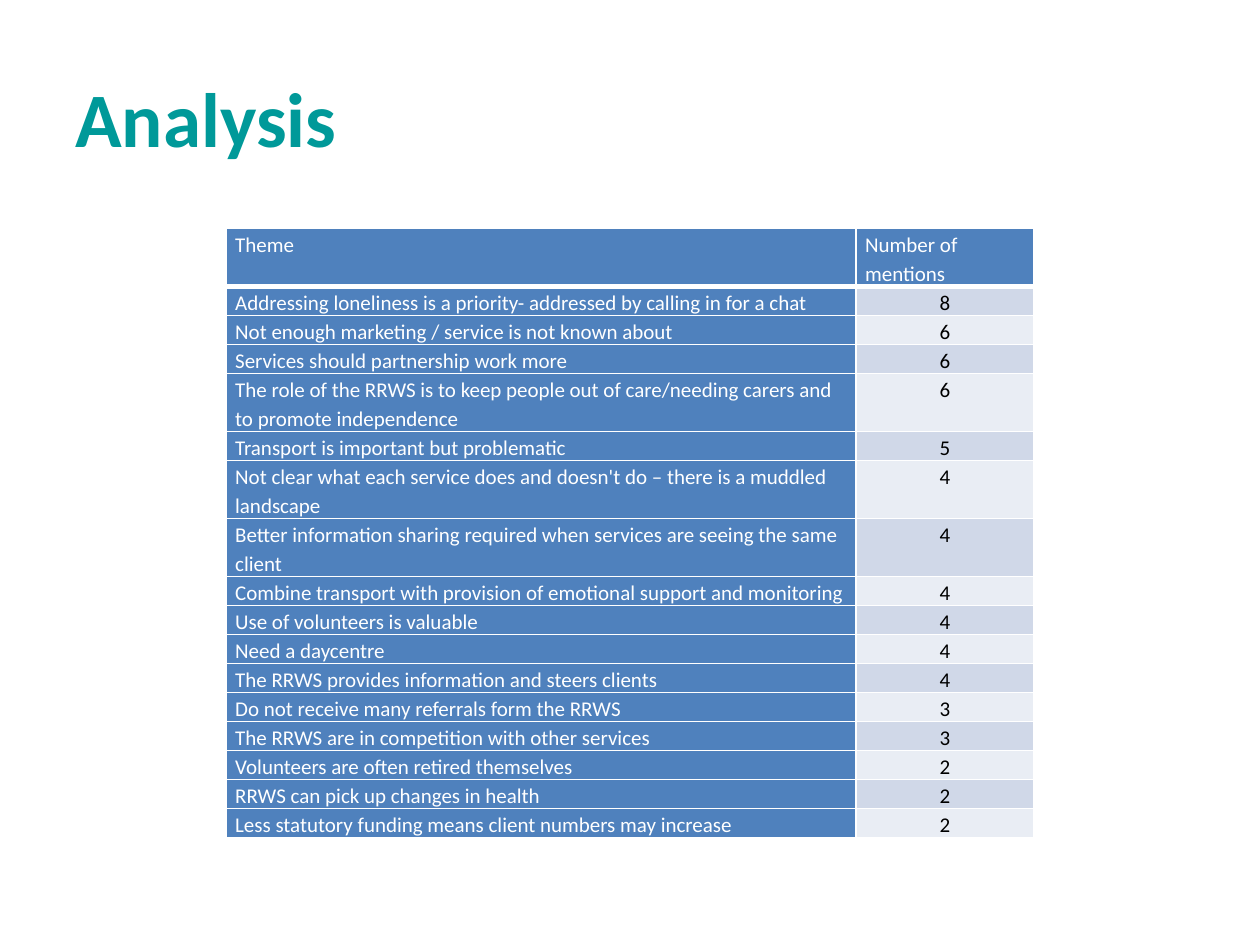
"""Build the analysis slide with its table of themes and mentions."""
from lxml import etree
from pptx import Presentation
from pptx import util as u
from pptx.dml.color import RGBColor
from pptx.enum import text
from pptx.oxml.ns import qn

HUES = {"teal": "009999", "blue": "4F81BD", "odd": "D0D8E8",
        "even": "E9EDF4", "white": "FFFFFF", "black": "000000"}

THEMES = [
    ("Addressing loneliness is a priority- addressed by calling in for a chat", 8),
    ("Not enough marketing / service is not known about", 6),
    ("Services should partnership work more", 6),
    ("The role of the RRWS is to keep people out of care/needing carers "
     "and to promote independence", 6),
    ("Transport is important but problematic", 5),
    ("Not clear what each service does and doesn't do – there is a muddled landscape", 4),
    ("Better information sharing required when services are seeing the same client", 4),
    ("Combine transport with provision of emotional support and monitoring", 4),
    ("Use of volunteers is valuable", 4),
    ("Need a daycentre", 4),
    ("The RRWS provides information and steers clients", 4),
    ("Do not receive many referrals form the RRWS", 3),
    ("The RRWS are in competition with other services", 3),
    ("Volunteers are often retired themselves", 2),
    ("RRWS can pick up changes in health", 2),
    ("Less statutory funding means client numbers may increase", 2),
]


class Deck:
    def __init__(self, slide, font="Calibri"):
        self.slide = slide
        self.font = font

    def label(self, frame, words, size, hue, bold=False):
        frame.text = words
        para = frame.paragraphs[0]
        for run in para.runs:
            run.font.name = self.font
            run.font.size = u.Pt(size)
            run.font.bold = bold
            run.font.color.rgb = RGBColor.from_string(HUES[hue])
        return para

    def title(self, words, box):
        frame = self.slide.shapes.add_textbox(*map(u.Pt, box)).text_frame
        frame.word_wrap = True
        frame.vertical_anchor = text.MSO_ANCHOR.MIDDLE
        self.label(frame, words, 44, "teal", True)

    def border(self, cell, base):
        props = cell._tc.get_or_add_tcPr()
        for side, width in zip("LRTB", (1, 1, 1, base)):
            line = etree.SubElement(props, qn("a:ln" + side), w=str(u.Pt(width)))
            fill = etree.SubElement(line, qn("a:solidFill"))
            etree.SubElement(fill, qn("a:srgbClr"), val=HUES["white"])

    def cell(self, cell, words, fill, hue, base=1):
        cell.margin_left = cell.margin_right = u.Pt(5.4)
        cell.margin_top = cell.margin_bottom = 0
        self.border(cell, base)
        cell.fill.solid()
        cell.fill.fore_color.rgb = RGBColor.from_string(HUES[fill])
        para = self.label(cell.text_frame, words, 12, hue)
        para.line_spacing = 1.15
        return para

    def table(self, head, rows, box, widths, height):
        frame = self.slide.shapes.add_table(len(rows) + 1, len(head), *map(u.Pt, box))
        table = frame.table
        table.first_row = table.horz_banding = False
        for col, width in zip(table.columns, widths):
            col.width = u.Pt(width)
        for row in table.rows:
            row.height = u.Pt(height)
        for col, words in enumerate(head):
            self.cell(table.cell(0, col), words, "blue", "white", 3)
        for num, (theme, count) in enumerate(rows, 1):
            self.cell(table.cell(num, 0), theme, "blue", "white")
            band = "odd" if num % 2 else "even"
            para = self.cell(table.cell(num, 1), str(count), band, "black")
            para.alignment = text.PP_ALIGN.CENTER


def main():
    show = Presentation()
    show.slide_width, show.slide_height = u.Pt(720), u.Pt(540)
    deck = Deck(show.slides.add_slide(show.slide_layouts[6]))
    deck.title("Analysis", (36, 21.6, 648, 90))
    deck.table(("Theme", "Number of mentions"), THEMES,
               (129, 130.5, 462, 364), (360, 102), 15.12)
    show.save("out.pptx")


if __name__ == "__main__":
    main()
